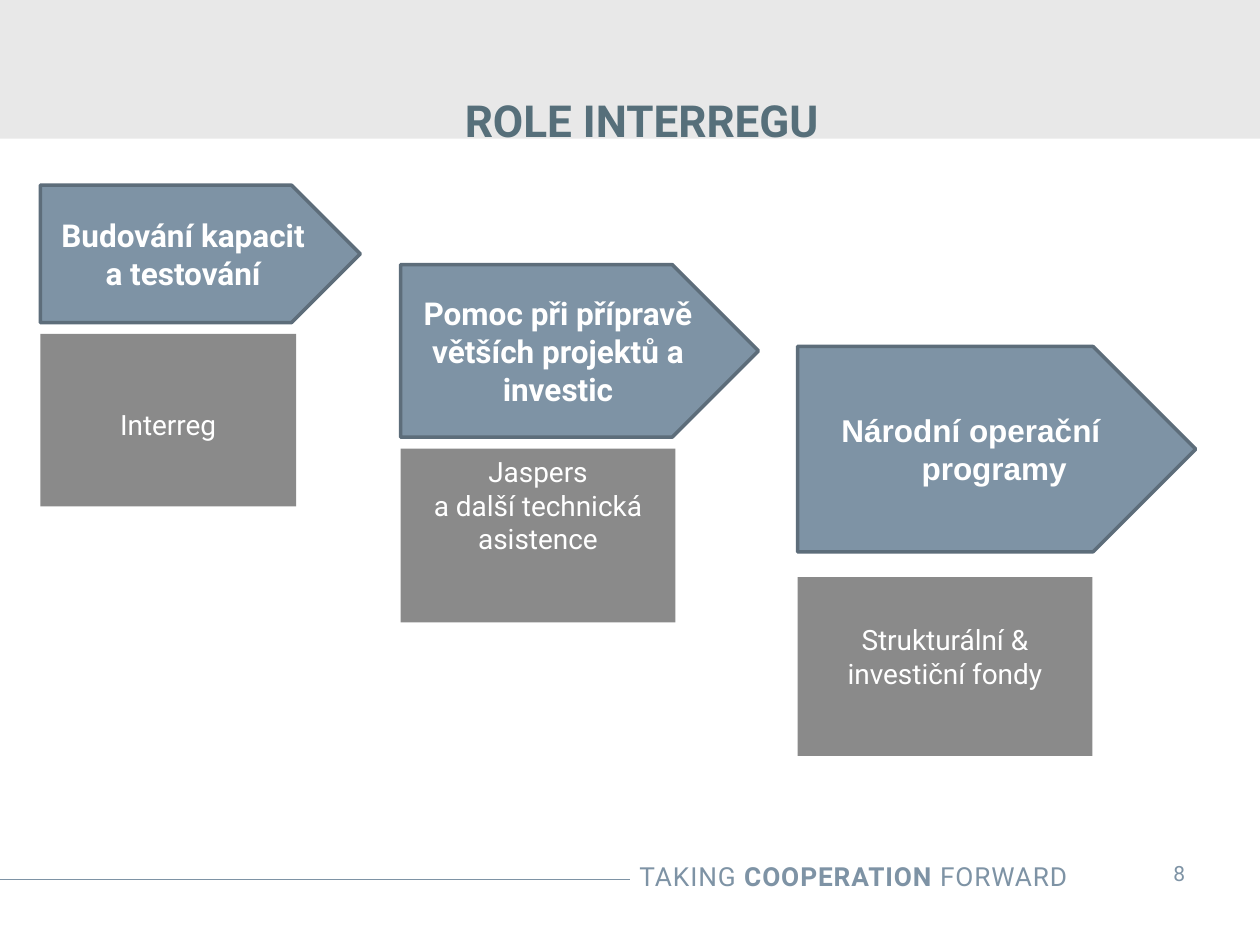
from dataclasses import dataclass

from lxml.etree import SubElement
from pptx import Presentation
from pptx.dml.color import RGBColor
from pptx.enum.shapes import MSO_CONNECTOR, MSO_SHAPE
from pptx.enum.text import MSO_ANCHOR, PP_ALIGN
from pptx.oxml.ns import qn
from pptx.util import Inches, Pt


@dataclass(frozen=True)
class Theme:
    font: str = "Roboto"
    alt_font: str = "Arial"
    band: str = "E8E8E8"
    blue: str = "7E93A5"
    edge: str = "5D6D7A"
    gray: str = "8A8A8A"
    title: str = "566F7A"
    white: str = "FFFFFF"
    title_size: float = 25.2
    step_size: float = 18
    note_size: float = 16
    footer_size: float = 15
    number_size: float = 12


THEME = Theme()
COLS, ROWS = 100, 75
WIDTH, HEIGHT = Inches(10), Inches(7.5)


def grid(x, y, w, h):
    cw, rh = WIDTH / COLS, HEIGHT / ROWS
    return [round(v) for v in (x * cw, y * rh, w * cw, h * rh)]


def apply(obj, values):
    for name, value in values.items():
        setattr(obj, name, value)


def style_run(r, size, color, bold=False, name=THEME.font):
    apply(r.font, {"size": Pt(size), "bold": bold, "name": name})
    r.font.color.rgb = RGBColor.from_string(color)


def write(sp, text, size, color, bold=False, name=THEME.font,
          align=PP_ALIGN.CENTER, **frame):
    tf = sp.text_frame
    apply(tf, {"word_wrap": True, "vertical_anchor": MSO_ANCHOR.MIDDLE, **frame})
    p = tf.paragraphs[0]
    p.text, p.alignment = text, align
    for r in p.runs:
        style_run(r, size, color, bold, name)
    return p


def add_block(s, kind, box, fill, edge=None):
    sp = s.shapes.add_shape(kind, *grid(*box))
    sp.shadow.inherit = False
    sp.fill.solid()
    sp.fill.fore_color.rgb = RGBColor.from_string(fill)
    if edge:
        sp.line.color.rgb = RGBColor.from_string(edge)
        sp.line.width = Pt(2)
    else:
        sp.line.fill.background()
    return sp


def add_step(s, box, text, **style):
    sp = add_block(s, MSO_SHAPE.PENTAGON, box, THEME.blue, THEME.edge)
    return write(sp, text, THEME.step_size, THEME.white, True, **style)


def add_note(s, box, text, **style):
    sp = add_block(s, MSO_SHAPE.RECTANGLE, box, THEME.gray)
    write(sp, text, THEME.note_size, THEME.white, **style)


def add_label(s, box, text, size, color, **style):
    sp = s.shapes.add_textbox(*grid(*box))
    return write(sp, text, size, color, **style)


def set_indent(p, left, first):
    pPr = p._p.get_or_add_pPr()
    pPr.set("marL", str(Inches(left)))
    pPr.set("indent", str(Inches(first)))


def add_rule(s, y, length):
    x, y, w, _ = grid(0, y, length, 0)
    line = s.shapes.add_connector(MSO_CONNECTOR.STRAIGHT, x, y, x + w, y)
    line.line.color.rgb = RGBColor.from_string(THEME.blue)
    line.line.width = Pt(0.75)
    SubElement(line._element.spPr, qn("a:effectLst"))


def add_footer(s):
    add_rule(s, 69.8, COLS / 2)
    p = add_label(s, (38.8, 67.8, 46.9, 3.5), "", THEME.footer_size,
                  THEME.blue, align=PP_ALIGN.RIGHT)
    for text, bold in (("TAKING ", False), ("COOPERATION", True), (" FORWARD", False)):
        r = p.add_run()
        r.text = text
        style_run(r, THEME.footer_size, THEME.blue, bold)
        r._r.get_or_add_rPr().set("spc", "50")
    add_label(s, (89.9, 67.3, 7.4, 4), "8", THEME.number_size, THEME.blue,
              word_wrap=False)


def main():
    prs = Presentation()
    apply(prs, {"slide_width": WIDTH, "slide_height": HEIGHT})
    s = prs.slides.add_slide(prs.slide_layouts[6])

    add_block(s, MSO_SHAPE.RECTANGLE, (0, 0, COLS, 11), THEME.band)
    add_footer(s)
    title = add_label(s, (33.5, 6.8, 52.8, 5.5), "ROLE INTERREGU", THEME.title_size,
                      THEME.title, bold=True, align=PP_ALIGN.LEFT)
    set_indent(title, 0.24, 0)

    add_step(s, (3.2, 14.7, 25.4, 10.9), "Budování kapacit a testování")
    add_note(s, (3.2, 26.5, 20.3, 13.7), "Interreg", margin_top=Inches(0.11))

    add_step(s, (31.8, 21, 28.4, 13.7),
             "Pomoc při přípravě větších projektů a investic")
    add_note(s, (31.8, 35.6, 21.8, 13.8), "Jaspers\va další technická asistence",
             vertical_anchor=MSO_ANCHOR.TOP)

    side, end = Inches(0.24), Inches(0.12)
    national = add_step(s, (63.3, 27.5, 31.6, 16.3), "Národní operační programy",
                        name=THEME.alt_font, margin_left=side, margin_right=side,
                        margin_top=end, margin_bottom=end)
    set_indent(national, 0.37, -0.37)
    add_note(s, (63.3, 45.8, 23.4, 14.2), "Strukturální & investiční fondy",
             margin_bottom=Inches(0.21))

    prs.save("out.pptx")


if __name__ == "__main__":
    main()
